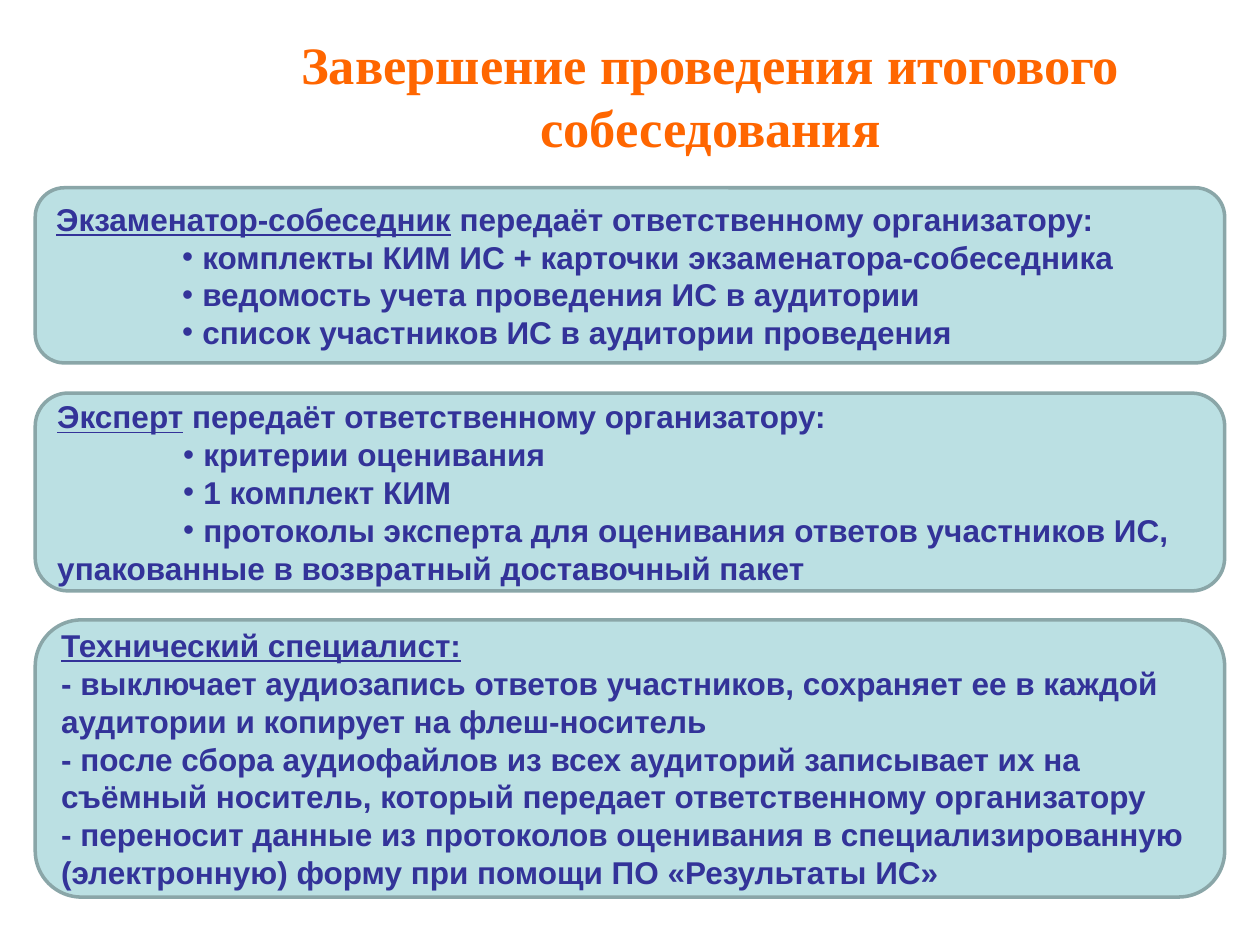
"""Builds the slide on finishing the final interview."""
import pptx
import pptx.dml.color
import pptx.enum.shapes
import pptx.enum.text
import pptx.oxml
import pptx.oxml.ns
import pptx.util
from pptx.util import Inches


def rgb(value):
    return pptx.dml.color.RGBColor.from_string(value)


def add_bullet(paragraph):
    properties = paragraph._p.get_or_add_pPr()
    properties.set("marL", str(Inches(1.16)))
    properties.set("indent", str(Inches(-0.16)))
    namespace = pptx.oxml.ns.nsdecls("a")
    properties.append(pptx.oxml.parse_xml(f'<a:buFont {namespace} typeface="Arial"/>'))
    properties.append(pptx.oxml.parse_xml(f'<a:buChar {namespace} char="•"/>'))


presentation = pptx.Presentation()
presentation.slide_width = Inches(10)
presentation.slide_height = Inches(7.5)
slide = presentation.slides.add_slide(presentation.slide_layouts[6])

heading = slide.shapes.add_textbox(Inches(1.14), Inches(0.13), Inches(9), Inches(1.25))
heading.text_frame.word_wrap = True
heading.text_frame.vertical_anchor = pptx.enum.text.MSO_ANCHOR.MIDDLE
heading_line = heading.text_frame.paragraphs[0]
heading_line.alignment = pptx.enum.text.PP_ALIGN.CENTER
heading_run = heading_line.add_run()
heading_run.text = "Завершение проведения итогового собеседования"
heading_run.font.name = "Times New Roman"
heading_run.font.size = pptx.util.Pt(30)
heading_run.font.bold = True
heading_run.font.color.rgb = rgb("FF6600")

handover = " передаёт ответственному организатору:"
roles = [
    (1.49, 1.39, "Экзаменатор-собеседник", handover, [
        ("комплекты КИМ ИС + карточки экзаменатора-собеседника", True),
        ("ведомость учета проведения ИС в аудитории", True),
        ("список участников ИС в аудитории проведения", True),
    ]),
    (3.12, 1.57, "Эксперт", handover, [
        ("критерии оценивания", True),
        ("1 комплект КИМ", True),
        ("протоколы эксперта для оценивания ответов участников ИС,", True),
        ("упакованные в возвратный доставочный пакет", False),
    ]),
    (4.92, 2.2, "Технический специалист:", "", [
        ("- выключает аудиозапись ответов участников, сохраняет ее в каждой "
         "аудитории и копирует на флеш-носитель", False),
        ("- после сбора аудиофайлов из всех аудиторий записывает их на "
         "съёмный носитель, который передает ответственному организатору", False),
        ("- переносит данные из протоколов оценивания в специализированную "
         "(электронную) форму при помощи ПО «Результаты ИС»", False),
    ]),
]

for top, height, role, action, duties in roles:
    panel = slide.shapes.add_shape(
        pptx.enum.shapes.MSO_SHAPE.ROUNDED_RECTANGLE,
        Inches(0.28), Inches(top), Inches(9.44), Inches(height))
    panel.shadow.inherit = False
    panel.fill.solid()
    panel.fill.fore_color.rgb = rgb("BBE0E3")
    panel.line.color.rgb = rgb("8AA6A8")
    panel.line.width = pptx.util.Pt(2)
    frame = panel.text_frame
    frame.word_wrap = True
    frame.vertical_anchor = pptx.enum.text.MSO_ANCHOR.MIDDLE

    lines = [([(role, True), (action, False)], False)]
    lines += [([(duty, False)], bulleted) for duty, bulleted in duties]
    for index, (pieces, bulleted) in enumerate(lines):
        paragraph = frame.add_paragraph() if index else frame.paragraphs[0]
        paragraph.alignment = pptx.enum.text.PP_ALIGN.LEFT
        if bulleted:
            add_bullet(paragraph)
        for text, underlined in pieces:
            if text:
                run = paragraph.add_run()
                run.text = text
                run.font.name = "Arial"
                run.font.size = pptx.util.Pt(18)
                run.font.bold = True
                run.font.underline = underlined
                run.font.color.rgb = rgb("333399")

presentation.save("out.pptx")
